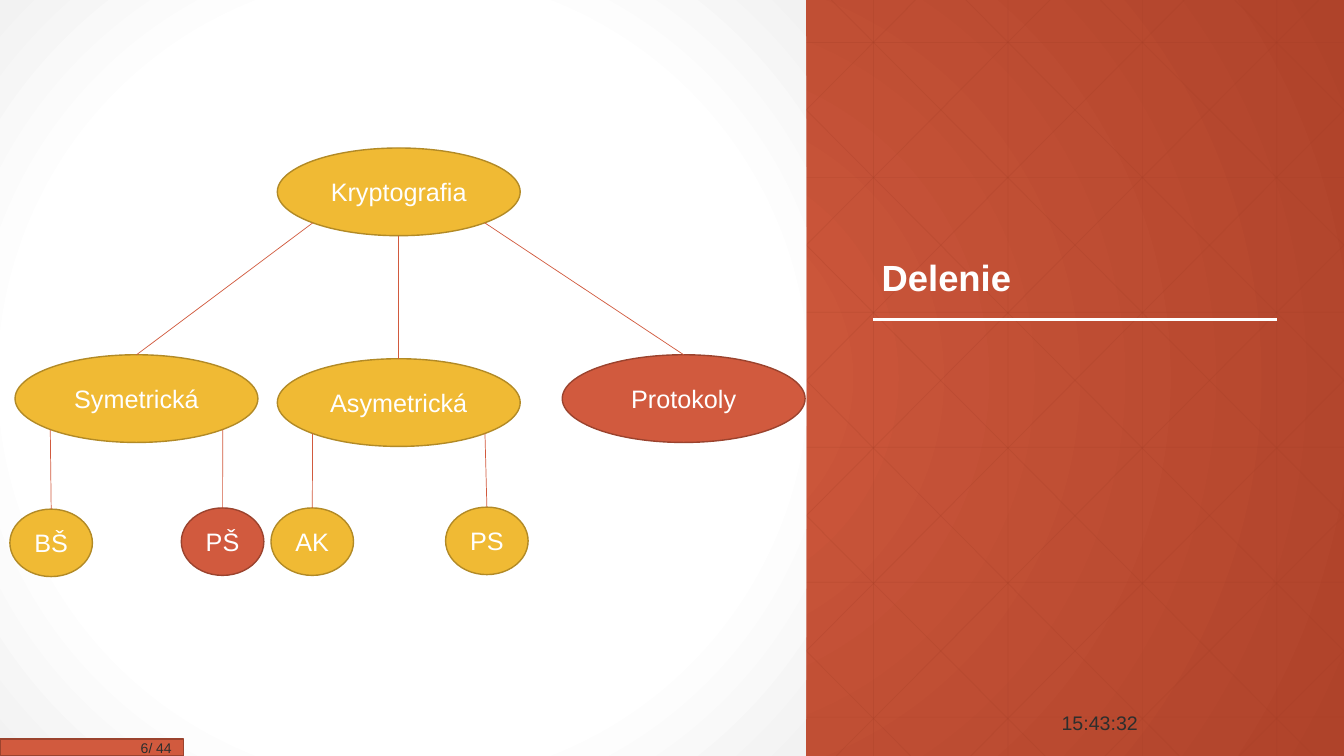
"""Build the slide that divides cryptography into branches."""
from pptx import Presentation
from pptx.dml.color import RGBColor
from pptx.enum.shapes import MSO_CONNECTOR, MSO_SHAPE
from pptx.enum.text import MSO_ANCHOR, PP_ALIGN
from pptx.oxml import parse_xml
from pptx.oxml.ns import nsdecls, qn
from pptx.util import Cm, Pt

W, H = 33.87, 19.05
GOLD, RED, WHITE, DARK = "F0BA34", "D15A3E", "FFFFFF", "2D2E2D"
EDGE = {GOLD: "B28A26", RED: "9B432E"}
hue = RGBColor.from_string

deck = Presentation()
deck.slide_width, deck.slide_height = Cm(W), Cm(H)
slide = deck.slides.add_slide(deck.slide_layouts[6])
shapes = slide.shapes


def link(x1, y1, x2, y2, color=RED, width=0.5):
    line = shapes.add_connector(MSO_CONNECTOR.STRAIGHT, Cm(x1), Cm(y1), Cm(x2), Cm(y2))
    line.line.color.rgb = hue(color)
    line.line.width = Pt(width)
    line._element.spPr.append(parse_xml(f"<a:effectLst {nsdecls('a')}/>"))
    return line


def write(shape, text, size, color, align, anchor, bold=False):
    frame = shape.text_frame
    frame.text = text
    frame.word_wrap = True
    frame.vertical_anchor = anchor
    para = frame.paragraphs[0]
    para.alignment = align
    font = para.runs[0].font
    font.name, font.size, font.bold = "Arial", Pt(size), bold
    font.color.rgb = hue(color)
    return para


step = W / 10
grid = [(W * 0.65 + step * i, 0, W * 0.65 + step * i, H) for i in range(4)]
grid += [(0, 1.07 + 3.4 * i, W, 1.07 + 3.4 * i) for i in range(6)]
for start, top, sign in ((4.02, 0, 1), (4.14, H, -1)):
    for i in range(9):
        x = start + step * i
        run = min(18.93, W - x)
        grid.append((x, top, x + run, top + sign * run * H / 18.93))
for ends in grid:
    line = link(*ends, "A43F27")
    tint = line._element.spPr.find(".//" + qn("a:srgbClr"))
    tint.append(parse_xml(f"<a:alpha {nsdecls('a')} val='25000'/>"))

panel = shapes.add_shape(MSO_SHAPE.RECTANGLE, 0, 0, Cm(20.32), Cm(H))
panel.shadow.inherit = False
panel.line.fill.background()
panel.fill.solid()
slide.background.fill.solid()
back = slide.element.find(".//" + qn("p:bgPr"))
for props, stops in (
    (back, ((0, RED), (100, "AF432A"))),
    (panel._element.spPr, ((0, WHITE), (69, WHITE), (100, "F2F2F2"))),
):
    marks = "".join(
        f"<a:gs pos='{pos * 1000}'><a:srgbClr val='{color}'/></a:gs>" for pos, color in stops
    )
    blend = parse_xml(
        f"<a:gradFill {nsdecls('a')} rotWithShape='1'><a:gsLst>{marks}</a:gsLst>"
        "<a:path path='circle'><a:fillToRect l='50000' t='50000' r='50000' b='50000'/>"
        "</a:path></a:gradFill>"
    )
    props.replace(props.find(qn("a:solidFill")), blend)

link(22, 8.05, 32.18, 8.05, WHITE, 1.5)
for text, box, size, color, align, anchor, bold in (
    ("Delenie", (21.97, 1.57, 10.16, 6.1), 26, WHITE, PP_ALIGN.LEFT, MSO_ANCHOR.BOTTOM, True),
    ("15:43:32", (26.24, 17.91, 2.69, 0.61), 14, DARK, PP_ALIGN.RIGHT, MSO_ANCHOR.MIDDLE, False),
):
    label = shapes.add_textbox(*map(Cm, box))
    para = write(label, text, size, color, align, anchor, bold)
    if bold:
        para.line_spacing = 0.9

BIG, SMALL = (6.12, 2.21), (2.08, 1.7)
nodes = {}
for name, x, y, (w, h), color in (
    ("Kryptografia", 6.99, 3.73, BIG, GOLD),
    ("Symetrická", 0.38, 8.94, BIG, GOLD),
    ("Asymetrická", 6.99, 9.04, BIG, GOLD),
    ("Protokoly", 14.17, 8.94, BIG, RED),
    ("BŠ", 0.25, 12.83, SMALL, GOLD),
    ("PŠ", 4.57, 12.8, SMALL, RED),
    ("AK", 6.83, 12.8, SMALL, GOLD),
    ("PS", 11.23, 12.78, SMALL, GOLD),
):
    node = shapes.add_shape(MSO_SHAPE.OVAL, Cm(x), Cm(y), Cm(w), Cm(h))
    node.shadow.inherit = False
    node.fill.solid()
    node.fill.fore_color.rgb = hue(color)
    node.line.color.rgb = hue(EDGE[color])
    node.line.width = Pt(1)
    write(node, name, 18, WHITE, PP_ALIGN.CENTER, MSO_ANCHOR.MIDDLE)
    nodes[name] = node

for above, below, side in (
    ("Kryptografia", "Symetrická", -1),
    ("Kryptografia", "Asymetrická", 0),
    ("Kryptografia", "Protokoly", 1),
    ("Asymetrická", "AK", -1),
    ("Asymetrická", "PS", 1),
    ("Symetrická", "PŠ", 1),
    ("Symetrická", "BŠ", -1),
):
    node = nodes[above]
    drop = 0.71 if side else 1
    x = node.left.cm + node.width.cm / 2 * (1 + 0.71 * side)
    y = node.top.cm + node.height.cm / 2 * (1 + drop)
    link(x, y, x, y).end_connect(nodes[below], 0)

bar = shapes.add_shape(MSO_SHAPE.RECTANGLE, 0, Cm(18.62), Cm(4.62), Cm(0.43))
bar.shadow.inherit = False
bar.fill.solid()
bar.fill.fore_color.rgb = hue(RED)
bar.line.color.rgb = hue(EDGE[RED])
bar.line.width = Pt(1)
page = shapes.add_textbox(Cm(3.2), Cm(18.52), Cm(3.53), Cm(0.69))
write(page, " 6/ 44", 10, DARK, PP_ALIGN.LEFT, MSO_ANCHOR.TOP)

deck.save("out.pptx")
